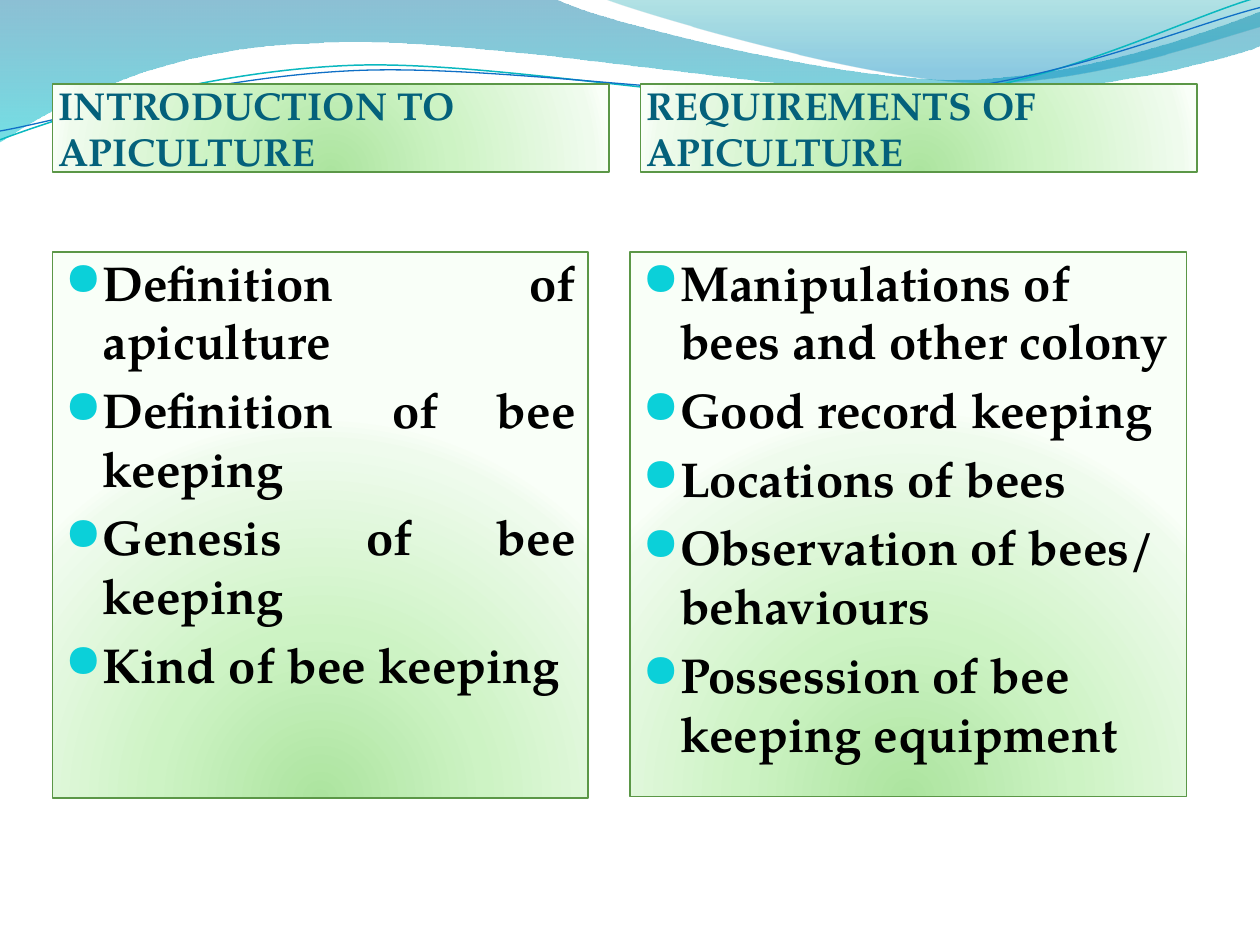
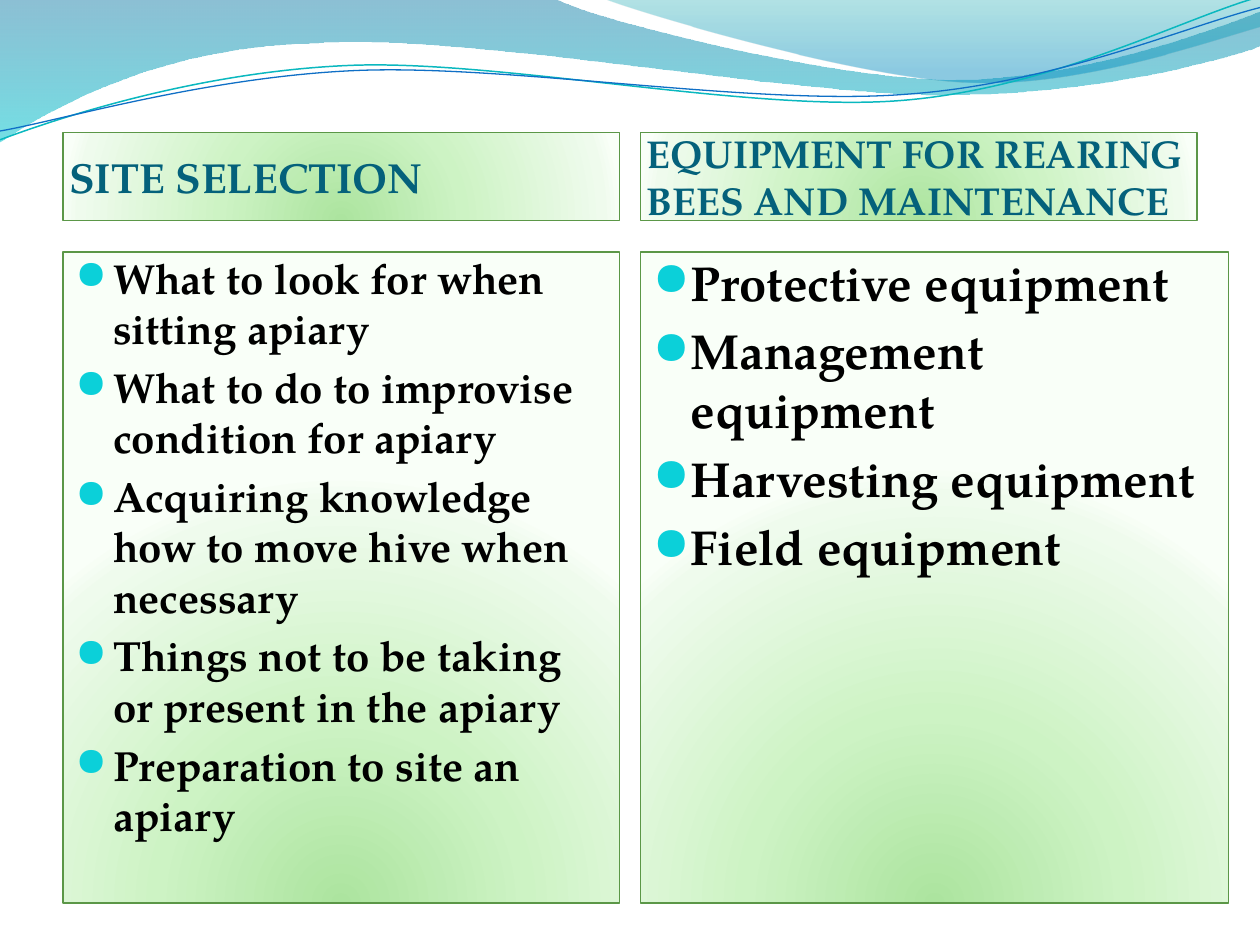
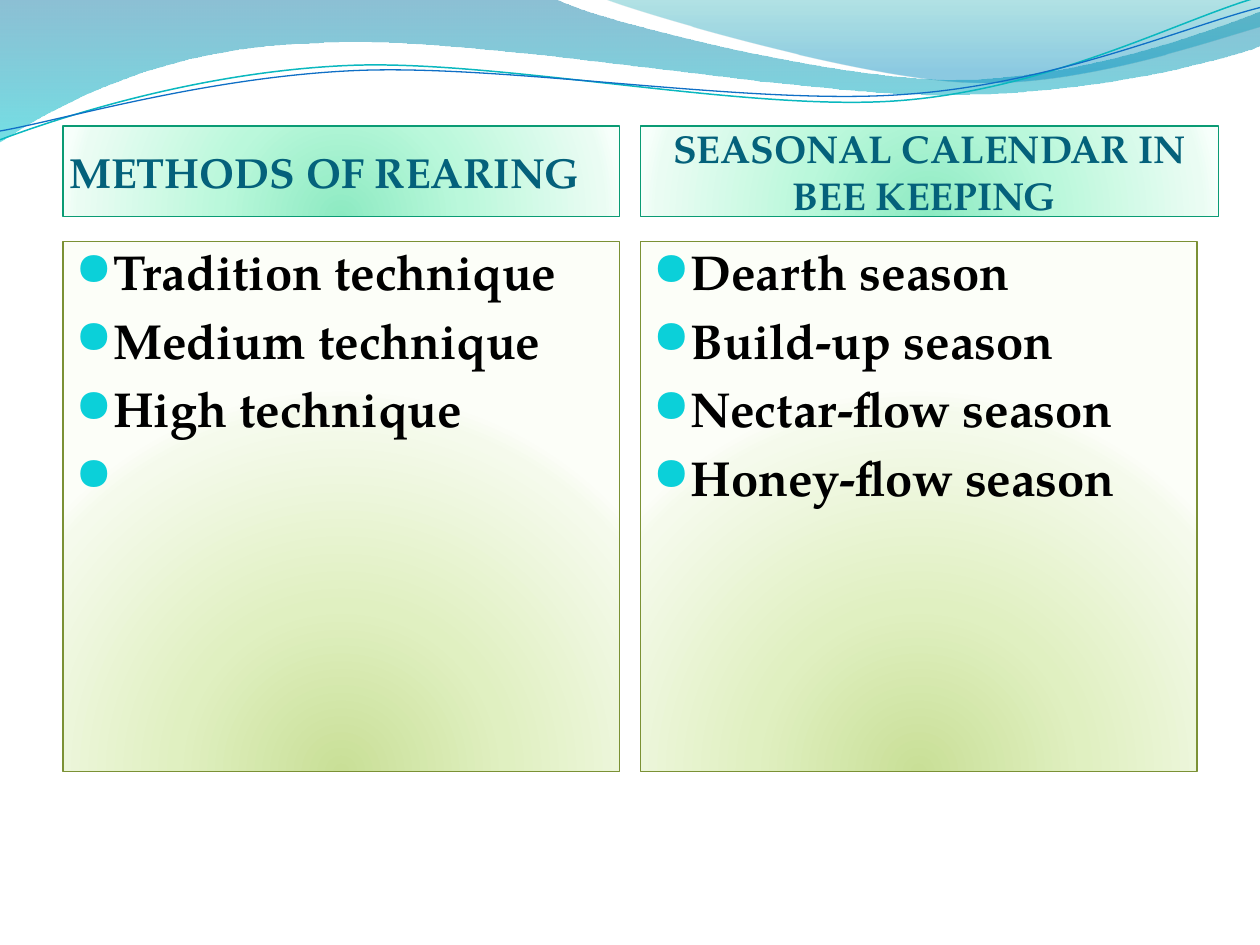
from dataclasses import dataclass

from pptx import Presentation
from pptx.dml.color import RGBColor
from pptx.enum.shapes import MSO_SHAPE
from pptx.enum.text import MSO_ANCHOR, PP_ALIGN
from pptx.oxml import parse_xml
from pptx.oxml.ns import nsdecls, qn
from pptx.util import Inches, Pt

RECT = MSO_SHAPE.RECTANGLE
TOP, MIDDLE = MSO_ANCHOR.TOP, MSO_ANCHOR.MIDDLE
LEFT, CENTER, JUSTIFY = PP_ALIGN.LEFT, PP_ALIGN.CENTER, PP_ALIGN.JUSTIFY
COLS, ROWS = 120, 90


@dataclass(frozen=True)
class Hue:
    """Outline and glow colours of one kind of panel."""
    line: str
    glow: tuple


@dataclass(frozen=True)
class Theme:
    """Colours, fonts and type sizes of the deck."""
    font: str = "TeX Gyre Pagella"
    signs: str = "OpenSymbol"
    title: str = "04617B"
    ink: str = "000000"
    dot: str = "0BD0D9"
    large: float = 28
    medium: float = 24
    small: float = 22.2
    stops: tuple = (0, 43, 93, 100)
    green: Hue = Hue("5B9747", ("ACE49F", "CDF3C4", "EFFBED", "F9FFF8"))
    mint: Hue = Hue("0A9B74", ("8DEAC2", "BAF8DB", "EAFCF3", "F7FFFB"))
    lime: Hue = Hue("7B9135", ("C9DF97", "E0F0C1", "F5FAEC", "FCFEF8"))


THEME = Theme()

BANDS = [
    (((0, 0), [
        ((4.4, -0.01),),
        ((4.76, 0.17), (6.64, 0.63), (7.58, 0.63)),
        ((8.53, 0.63), (9.58, 0.26), (10, 0.09)),
        ((10.01, 0.36),),
        ((9.83, 0.44), (8.7, 0.76), (7.46, 0.75)),
        ((6.22, 0.75), (3.82, 0.28), (2.57, 0.34)),
        ((1.29, 0.36), (0.46, 0.83), (-0.01, 1.13)),
    ]), [(0, "0074A1", 45), (100, "00C6CF", 55)]),
    (((4.79, -0.01), [
        ((5.09, 0.11), (6.82, 0.62), (7.69, 0.65)),
        ((8.56, 0.69), (9.61, 0.32), (10, 0.21)),
        ((10, 0),),
    ]), [(0, "00A1A9", 30), (80, "008BBF", 45)]),
]
STRANDS = [
    (((0, 1.11), [
        ((0.48, 0.93), (1.58, 0.57), (2.77, 0.52)),
        ((3.95, 0.47), (5.93, 0.89), (7.13, 0.8)),
        ((8.33, 0.71), (9.38, 0.15), (9.98, -0.02)),
    ]), "0AB8BF", 0.85),
    (((0, 1.04), [
        ((0.47, 0.96), (1.64, 0.61), (2.83, 0.56)),
        ((4.03, 0.51), (5.97, 0.84), (7.17, 0.75)),
        ((8.36, 0.67), (9.41, 0.21), (10, 0.06)),
    ]), "0F6FC6", 0.75),
]


def outline(slide, curve, close):
    """Draw a freeform whose parts are lines (one point) or curves (three)."""
    start, parts = curve
    pen = slide.shapes.build_freeform(*map(Inches, start))
    pen.add_line_segments(
        [(Inches(x), Inches(y)) for part in parts for x, y in part], close)
    shape = pen.convert_to_shape()
    shape.shadow.inherit = False
    legs = iter(list(shape._element.iter(qn("a:lnTo"))))
    for part in parts:
        group = [next(legs) for _ in part]
        if len(group) == 3:
            bend = parse_xml(f'<a:cubicBezTo {nsdecls("a")}/>')
            group[0].addprevious(bend)
            for leg in group:
                bend.append(leg[0])
                leg.getparent().remove(leg)
    return shape


def blend(shape, stops, tail):
    """Fill a shape with a gradient of (place, colour, opacity) stops."""
    marks = "".join(
        f'<a:gs pos="{at * 1000}"><a:srgbClr val="{tint}">'
        f'<a:alpha val="{alpha * 1000}"/></a:srgbClr></a:gs>'
        for at, tint, alpha in stops)
    shape.fill.gradient()
    frame = shape._element.spPr
    frame.replace(frame.find(qn("a:gradFill")), parse_xml(
        f'<a:gradFill {nsdecls("a")} rotWithShape="1">'
        f'<a:gsLst>{marks}</a:gsLst>{tail}</a:gradFill>'))


def waves(slide):
    """Draw the bands and strands and hand them to the slide's layout."""
    for curve, stops in BANDS:
        band = outline(slide, curve, True)
        band.line.fill.background()
        blend(band, stops, '<a:lin ang="5400000" scaled="1"/>')
    for curve, tint, width in STRANDS:
        strand = outline(slide, curve, False)
        strand.fill.background()
        strand.line.color.rgb = RGBColor.from_string(tint)
        strand.line.width = Pt(width)
    layout = slide.slide_layout
    for holder in list(layout.placeholders):
        holder._element.getparent().remove(holder._element)
    for shape in list(slide.shapes):
        layout.shapes._spTree.append(shape._element)


def panel(slide, box, hue, anchor, inset):
    """Draw a glowing panel on the grid and return its text frame."""
    x, y, w, h = box
    col, row = Inches(10) / COLS, Inches(7.5) / ROWS
    shape = slide.shapes.add_shape(
        RECT, round(x * col), round(y * row), round(w * col), round(h * row))
    shape.shadow.inherit = False
    shape.line.color.rgb = RGBColor.from_string(hue.line)
    shape.line.width = Pt(0.75)
    glow = [(at, tint, 100) for at, tint in zip(THEME.stops, hue.glow)]
    blend(shape, glow, '<a:path path="circle"><a:fillToRect l="50000" '
          't="130000" r="50000" b="-30000"/></a:path>')
    frame = shape.text_frame
    frame.word_wrap = True
    frame.vertical_anchor = anchor
    frame.margin_left = frame.margin_right = Inches(inset)
    frame.margin_top = 0
    return frame


def style(para, size, tint, align):
    """Format a paragraph and its runs."""
    para.alignment = align
    props = para._p.get_or_add_pPr()
    props.append(parse_xml(
        f'<a:spcBef {nsdecls("a")}><a:spcPct val="20000"/></a:spcBef>'))
    for run in para.runs:
        font = run.font
        font.name, font.size, font.bold = THEME.font, Pt(size), True
        font.color.rgb = RGBColor.from_string(tint)
    return props


def head(slide, box, hue, text, align=LEFT):
    """Place a heading, smaller when it needs two lines."""
    frame = panel(slide, box, hue, MIDDLE, 0.05)
    frame.margin_bottom = 0
    frame.text = text
    size = THEME.medium if len(text) < 20 else THEME.small
    style(frame.paragraphs[0], size, THEME.title, align)


def points(slide, box, hue, items, size=THEME.large, align=LEFT):
    """Place a bulleted list."""
    frame = panel(slide, box, hue, TOP, 0.1)
    frame.text = "\n".join(items)
    for para in frame.paragraphs:
        props = style(para, size, THEME.ink, align)
        props.set("marL", str(Inches(0.3)))
        props.set("indent", str(-Inches(0.3)))
        for mark in (f'buClr {nsdecls("a")}><a:srgbClr val="{THEME.dot}"/></a:buClr',
                     f'buSzPct {nsdecls("a")} val="95000"/',
                     f'buFont {nsdecls("a")} typeface="{THEME.signs}"/',
                     f'buChar {nsdecls("a")} char="●"/'):
            props.append(parse_xml(f"<a:{mark}>"))


def basics(slide):
    """Fill the slide on introduction and requirements."""
    hue = THEME.green
    head(slide, (5, 8, 53, 8.4), hue, "INTRODUCTION TO APICULTURE")
    head(slide, (61, 8, 53, 8.4), hue, "REQUIREMENTS OF APICULTURE")
    points(slide, (5, 24, 51, 52), hue, [
        "Definition of apiculture",
        "Definition of bee keeping ",
        "Genesis of bee keeping",
        "Kind of bee keeping"], align=JUSTIFY)
    points(slide, (60, 24, 53, 51.85), hue, [
        "Manipulations of bees and other colony",
        "Good record keeping",
        "Locations of bees",
        "Observation of bees/ behaviours",
        "Possession of bee keeping equipment"])


def site(slide):
    """Fill the slide on site and equipment."""
    hue = THEME.green
    head(slide, (6, 12.6, 53, 8.4), hue, "SITE SELECTION")
    head(slide, (61, 12.6, 53, 8.4), hue,
         "EQUIPMENT FOR REARING BEES AND MAINTENANCE")
    points(slide, (6, 24, 53, 62), hue, [
        "What to look for when sitting apiary",
        "What to do to improvise condition for apiary",
        "Acquiring knowledge how to move hive when necessary",
        "Things not to be taking or present in the apiary",
        "Preparation to site an apiary"], THEME.medium)
    points(slide, (61, 24, 56, 62), hue, [
        "Protective equipment",
        "Management equipment",
        "Harvesting equipment",
        "Field equipment"])


def season(slide):
    """Fill the slide on methods and seasons."""
    head(slide, (6, 12, 53, 8.65), THEME.mint, "METHODS OF REARING")
    head(slide, (61, 12, 55.05, 8.65), THEME.mint,
         "SEASONAL CALENDAR IN BEE KEEPING ", CENTER)
    points(slide, (6, 23, 53, 50.5), THEME.lime, [
        "Tradition technique",
        "Medium technique",
        "High technique",
        " "])
    points(slide, (61, 23, 53, 50.5), THEME.lime, [
        "Dearth season",
        "Build-up season",
        "Nectar-flow season",
        "Honey-flow season"])


def main():
    """Build and save the deck."""
    deck = Presentation()
    deck.slide_width, deck.slide_height = Inches(10), Inches(7.5)
    blank = deck.slide_layouts[6]
    slides = [deck.slides.add_slide(blank) for _ in range(3)]
    waves(slides[0])
    for fill, slide in zip((basics, site, season), slides):
        fill(slide)
    deck.save("out.pptx")


if __name__ == "__main__":
    main()
